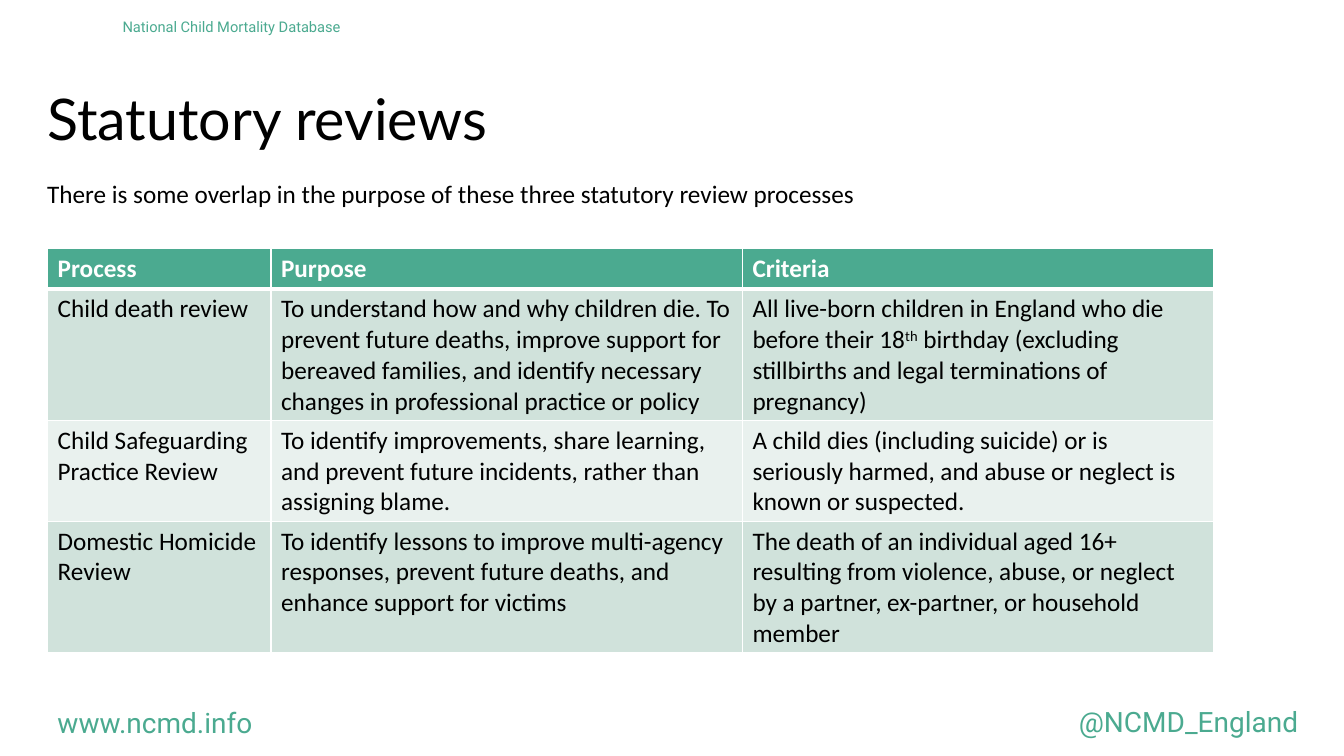
"""Build the statutory reviews slide."""
from dataclasses import dataclass

from lxml import etree
from pptx import Presentation
from pptx.dml.color import RGBColor
from pptx.enum.text import MSO_ANCHOR, MSO_AUTO_SIZE, PP_ALIGN
from pptx.oxml.ns import qn
from pptx.util import Cm, Pt

TOP, BOTTOM = MSO_ANCHOR.TOP, MSO_ANCHOR.BOTTOM
LEFT, RIGHT = PP_ALIGN.LEFT, PP_ALIGN.RIGHT
GROW, FIXED = MSO_AUTO_SIZE.SHAPE_TO_FIT_TEXT, MSO_AUTO_SIZE.NONE


@dataclass(frozen=True)
class Theme:
    """Colours, fonts and type sizes of the slide."""
    green: str = "4BAA90"
    band_dark: str = "D0E2DB"
    band_light: str = "E9F1EE"
    white: str = "FFFFFF"
    black: str = "000000"
    title_font: str = "Lato"
    body_font: str = "Calibri"
    brand_font: str = "Roboto"
    title_size: float = 41
    body_size: float = 18
    footer_size: float = 20
    header_size: float = 10.5
    rule: float = 1
    heavy_rule: float = 3


THEME = Theme()
COLUMN_WIDTHS = (5.63, 11.88, 11.88)
ROW_HEIGHTS = (1.03, 3.31, 2.54, 3.31)
REVIEWS = (
    ("Process", "Purpose", "Criteria"),
    ("Child death review",
     "To understand how and why children die. To prevent future deaths, improve support for "
     "bereaved families, and identify necessary changes in professional practice or policy",
     ("All live-born children in England who die before their 18", "th",
      " birthday (excluding stillbirths and legal terminations of pregnancy)")),
    ("Child Safeguarding Practice Review",
     "To identify improvements, share learning, and prevent future incidents, rather than "
     "assigning blame.",
     "A child dies (including suicide) or is seriously harmed, and abuse or neglect is known "
     "or suspected."),
    ("Domestic Homicide Review",
     "To identify lessons to improve multi-agency responses, prevent future deaths, and "
     "enhance support for victims",
     "The death of an individual aged 16+ resulting from violence, abuse, or neglect by a "
     "partner, ex-partner, or household member"),
)


def set_values(target, values):
    """Set each named attribute of the target."""
    for name, value in values.items():
        setattr(target, name, value)


def add_span(para, text, font, size, color, bold=False, raised=False):
    """Add one formatted run, raised for a superscript."""
    span = para.add_run()
    span.text = text
    set_values(span.font, {"name": font, "size": Pt(size), "bold": bold})
    span.font.color.rgb = RGBColor.from_string(color)
    if raised:
        span._r.get_or_add_rPr().set("baseline", "30000")


def add_text(page, place, text, font, size, color, frame_format=None, para_format=None):
    """Add a one-paragraph text box at left, top, width, height."""
    box = page.shapes.add_textbox(*map(Cm, place))
    frame_values = {"word_wrap": True, "auto_size": GROW, "vertical_anchor": TOP}
    set_values(box.text_frame, {**frame_values, **(frame_format or {})})
    para = box.text_frame.paragraphs[0]
    set_values(para, {"alignment": LEFT, **(para_format or {})})
    add_span(para, text, font, size, color)


def set_borders(cell, top, bottom):
    """Draw white borders round a cell, given the top and bottom widths."""
    properties = cell._tc.get_or_add_tcPr()
    widths = {"lnL": THEME.rule, "lnR": THEME.rule, "lnT": top, "lnB": bottom}
    for index, (side, width) in enumerate(widths.items()):
        line = etree.Element(qn(f"a:{side}"), w=str(Pt(width)))
        fill = etree.SubElement(line, qn("a:solidFill"))
        etree.SubElement(fill, qn("a:srgbClr"), val=THEME.white)
        properties.insert(index, line)


def fill_cell(cell, content, row_index):
    """Write and style one cell; a tuple's odd parts are superscripts."""
    is_header = row_index == 0
    band = THEME.band_dark if row_index % 2 else THEME.band_light
    cell.fill.solid()
    cell.fill.fore_color.rgb = RGBColor.from_string(THEME.green if is_header else band)
    set_borders(cell, THEME.heavy_rule if row_index == 1 else THEME.rule,
                THEME.heavy_rule if is_header else THEME.rule)
    parts = (content,) if isinstance(content, str) else content
    for index, part in enumerate(parts):
        add_span(cell.text_frame.paragraphs[0], part, THEME.body_font, THEME.body_size,
                 THEME.white if is_header else THEME.black, is_header, index % 2 == 1)


def add_review_table(page, left, top):
    """Add the table that compares the review processes."""
    size = (sum(COLUMN_WIDTHS), sum(ROW_HEIGHTS))
    frame = page.shapes.add_table(len(REVIEWS), len(COLUMN_WIDTHS),
                                  *map(Cm, (left, top, *size)))
    table = frame.table
    for column, width in zip(table.columns, COLUMN_WIDTHS):
        column.width = Cm(width)
    for row_index, (row, height) in enumerate(zip(table.rows, ROW_HEIGHTS)):
        row.height = Cm(height)
        for cell, content in zip(row.cells, REVIEWS[row_index]):
            fill_cell(cell, content, row_index)


def main():
    """Build and save the deck."""
    deck = Presentation()
    set_values(deck, {"slide_width": Cm(33.87), "slide_height": Cm(19.05)})
    page = deck.slides.add_slide(deck.slide_layouts[6])
    brand = (THEME.brand_font, THEME.footer_size, THEME.green)
    add_text(page, (0.94, 1.75, 31.14, 2.24), "Statutory reviews",
             THEME.title_font, THEME.title_size, THEME.black,
             {"auto_size": FIXED, "vertical_anchor": BOTTOM}, {"line_spacing": 0.9})
    add_text(page, (0.94, 4.37, 30.71, 1.03),
             "There is some overlap in the purpose of these three statutory review processes",
             THEME.body_font, THEME.body_size, THEME.black)
    add_review_table(page, 1.2, 6.25)
    add_text(page, (2.84, 0.33, 6.1, 0.71), "National Child Mortality Database",
             THEME.brand_font, THEME.header_size, THEME.green,
             para_format={"space_after": Pt(6)})
    add_text(page, (1.2, 17.65, 8.61, 1.11), "www.ncmd.info", *brand)
    add_text(page, (23.24, 17.63, 9.73, 1.11), "@NCMD_England", *brand,
             para_format={"alignment": RIGHT})
    deck.save("out.pptx")


if __name__ == "__main__":
    main()
